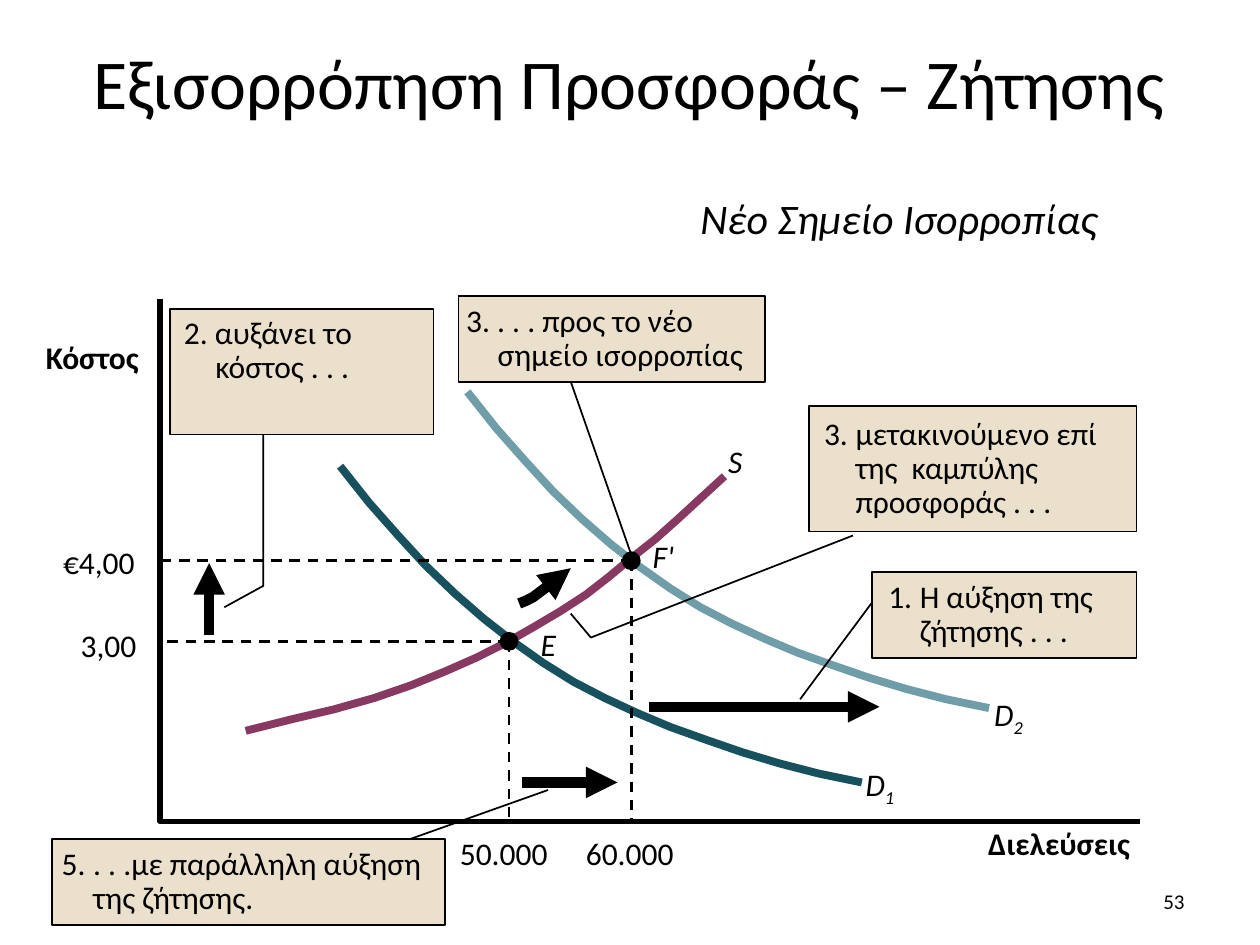
import pptx
import pptx.util
import pptx.dml.color
import pptx.enum.dml
import pptx.enum.shapes
import pptx.enum.text
import pptx.oxml
import pptx.oxml.ns

RGBColor = pptx.dml.color.RGBColor
ALIGN = pptx.enum.text.PP_ALIGN
ANCHOR = pptx.enum.text.MSO_ANCHOR
SHAPE = pptx.enum.shapes.MSO_SHAPE
Pt = pptx.util.Pt
qn = pptx.oxml.ns.qn

BLACK = RGBColor(0x00, 0x00, 0x00)
SAND = RGBColor(0xEB, 0xE0, 0xCC)
TEAL = RGBColor(0x17, 0x51, 0x5E)
LIGHT_TEAL = RGBColor(0x6F, 0x9D, 0xA8)
PLUM = RGBColor(0x87, 0x39, 0x62)

TITLE = "Εξισορρόπηση Προσφοράς – Ζήτησης"
ORIGIN = (1.27, 6.52)
AXES = [(1.27, 2.37), ORIGIN, (9.05, 6.52)]
EQUILIBRIA = [(4.04, 5.09), (5.01, 4.45)]
DOT = 0.15
DEMAND_SHIFT = (1.01, -0.59)
DEMAND = [
    (6.84, 6.21), (6.5, 6.14), (6.19, 6.06), (5.89, 5.97), (5.6, 5.87),
    (5.32, 5.77), (5.06, 5.66), (4.8, 5.54), (4.55, 5.41), (4.31, 5.26),
    (4.07, 5.09), (3.84, 4.91), (3.61, 4.71), (3.38, 4.49), (3.16, 4.25),
    (2.93, 3.99), (2.7, 3.7),
]
SUPPLY = [
    (1.95, 5.8), (2.31, 5.71), (2.65, 5.63), (2.97, 5.54), (3.26, 5.44),
    (3.53, 5.33), (3.78, 5.22), (4.02, 5.1), (4.23, 4.98), (4.45, 4.85),
    (4.65, 4.72), (4.83, 4.58), (5.01, 4.43), (5.2, 4.28), (5.38, 4.12),
    (5.75, 3.78),
]
ARROWS = [
    [(1.66, 5.04), (1.66, 4.47)],
    [(4.14, 6.21), (4.9, 6.21)],
    [(5.15, 5.61), (6.98, 5.61)],
    [(4.12, 4.79), (4.17, 4.77), (4.23, 4.74), (4.35, 4.65), (4.48, 4.57),
     (4.52, 4.54), (4.53, 4.51)],
]
LEADERS = [
    [(6.35, 5.55), (6.93, 4.77)],
    [(3.14, 6.7), (4.35, 6.27)],
    [(6.77, 4.25), (4.69, 5.06), (4.53, 4.87)],
    [(2.09, 3.15), (2.09, 4.65), (1.78, 4.82)],
    [(4.52, 3), (5.02, 4.43)],
]
CALLOUTS = [
    ("1.\tΗ αύξηση της ζήτησης . . .", (6.92, 4.54, 2.1, 0.68), 0.13, 0.07),
    ("3. . . . προς το νέο σημείο ισορροπίας", (3.64, 2.35, 2.43, 0.68), 0.06, 0.07),
    ("5.\t. . .με παράλληλη αύξηση της ζήτησης.", (0.41, 6.66, 3.12, 0.68), 0.08, 0.07),
    ("3.\tμετακινούμενο επί της  καμπύλης προσφοράς . . .", (6.42, 3.22, 2.6, 1), 0.12, 0.1),
    ("2. αυξάνει το κόστος . . .", (1.35, 2.45, 2.09, 1), 0.11, 0.07),
]
CURVE_LABELS = [
    ("E", "", (4.29, 4.96, 0.17, 0.3)),
    ("F'", "", (5.18, 4.26, 0.28, 0.3)),
    ("S", "", (5.78, 3.51, 0.17, 0.3)),
    ("D", "1", (6.87, 6.07, 0.27, 0.3)),
    ("D", "2", (7.89, 5.52, 0.27, 0.3)),
]
TICK_LABELS = [
    ("€4,00", (0.5, 4.31, 0.58, 0.3)),
    ("3,00", (0.64, 4.97, 0.45, 0.3)),
    ("50.000", (3.65, 6.62, 0.7, 0.3)),
    ("60.000", (4.65, 6.62, 0.7, 0.3)),
]
AXIS_TITLES = [
    ("Διελεύσεις", (6.06, 6.57, 2.91, 0.27), 0.9),
    ("Κόστος", (-0.05, 2.74, 1.15, 0.25), 0.8),
]


def cm(inches):
    return pptx.util.Cm(inches * 2.54)


def add_run(p, text, size=18, bold=False, italic=False):
    r = p.add_run()
    r.text = text
    r.font.name = "Calibri"
    r.font.size = Pt(size)
    r.font.bold = bold
    r.font.italic = italic
    r.font.color.rgb = BLACK
    return r


def set_margins(tf, x, y):
    tf.margin_left = tf.margin_right = cm(x)
    tf.margin_top = tf.margin_bottom = cm(y)


def add_text(s, box, text, wrap=False, margins=(0, 0), align=ALIGN.LEFT, **font):
    tf = s.shapes.add_textbox(*map(cm, box)).text_frame
    tf.word_wrap = wrap
    tf.auto_size = pptx.enum.text.MSO_AUTO_SIZE.SHAPE_TO_FIT_TEXT
    set_margins(tf, *margins)
    p = tf.paragraphs[0]
    p.alignment = align
    add_run(p, text, **font)
    return tf


def add_path(s, points, color, width, dashed=False, arrow=False):
    pts = [(cm(x), cm(y)) for x, y in points]
    if len(pts) == 2:
        sp = s.shapes.add_connector(
            pptx.enum.shapes.MSO_CONNECTOR.STRAIGHT, *pts[0], *pts[1])
    else:
        fb = s.shapes.build_freeform(*pts[0])
        fb.add_line_segments(pts[1:], close=False)
        sp = fb.convert_to_shape()
        sp.fill.background()
    sp.line.color.rgb = color
    sp.line.width = Pt(width)
    if dashed:
        sp.line.dash_style = pptx.enum.dml.MSO_LINE.DASH
    spPr = sp.element.spPr
    if arrow:
        tail = pptx.oxml.ns.qn("a:tailEnd")
        spPr.find(qn("a:ln")).append(
            spPr.makeelement(tail, {"type": "triangle"}))
    spPr.append(spPr.makeelement(qn("a:effectLst"), {}))


def add_filled(s, kind, box, fill):
    sp = s.shapes.add_shape(kind, *map(cm, box))
    sp.shadow.inherit = False
    sp.fill.solid()
    sp.fill.fore_color.rgb = fill
    sp.line.color.rgb = BLACK
    sp.line.width = Pt(1)
    return sp


def add_callout(s, text, box, mx, my):
    tf = add_filled(s, SHAPE.RECTANGLE, box, SAND).text_frame
    tf.word_wrap = True
    tf.vertical_anchor = ANCHOR.TOP
    set_margins(tf, mx, my)
    p = tf.paragraphs[0]
    p.alignment = ALIGN.LEFT
    p.line_spacing = 0.9
    pPr = p._p.get_or_add_pPr()
    pPr.set("marL", str(cm(0.25)))
    pPr.set("indent", str(-cm(0.25)))
    add_run(p, text)


def main():
    prs = pptx.Presentation()
    prs.slide_width, prs.slide_height = cm(10), cm(7.5)
    s = prs.slides.add_slide(prs.slide_layouts[5])

    title = s.shapes.title
    title.left, title.top, title.width, title.height = map(cm, (-0.02, 0.02, 10.02, 1.25))
    title.text_frame.vertical_anchor = ANCHOR.MIDDLE
    p = title.text_frame.paragraphs[0]
    p.alignment = ALIGN.CENTER
    add_run(p, TITLE, size=40)

    for points in ARROWS:
        add_path(s, points, BLACK, 6, arrow=True)
    dx, dy = DEMAND_SHIFT
    new_demand = [(x + dx, y + dy) for x, y in DEMAND]
    for points, color in ((DEMAND, TEAL), (new_demand, LIGHT_TEAL), (SUPPLY, PLUM)):
        add_path(s, points, color, 4.5)
    for points in LEADERS:
        add_path(s, points, BLACK, 1)
    add_path(s, AXES, BLACK, 3)

    for x, y in EQUILIBRIA:
        add_path(s, [(x, y), (x, ORIGIN[1])], BLACK, 1.5, dashed=True)
        add_path(s, [(x, y), (ORIGIN[0], y)], BLACK, 1.5, dashed=True)
        dot = add_filled(s, SHAPE.OVAL, (x - DOT / 2, y - DOT / 2, DOT, DOT), BLACK)
        dot.line.fill.background()

    for callout in CALLOUTS:
        add_callout(s, *callout)

    for text, index, box in CURVE_LABELS:
        tf = add_text(s, box, text, italic=True)
        if index:
            r = add_run(tf.paragraphs[0], index, italic=True)
            r.font._rPr.set("baseline", "-25000")
    for text, box in TICK_LABELS:
        add_text(s, box, text)
    for text, box, spacing in AXIS_TITLES:
        tf = add_text(s, box, text, wrap=True, align=ALIGN.RIGHT, bold=True)
        tf.paragraphs[0].line_spacing = spacing

    add_text(s, (5.46, 1.48, 3.51, 0.5), "Νέο Σημείο Ισορροπίας",
             wrap=True, margins=(0.1, 0.05), size=24, italic=True)
    number = add_text(s, (7.17, 6.95, 2.33, 0.4), "53", wrap=True,
                      margins=(0.1, 0.05), align=ALIGN.RIGHT, size=12)
    number.auto_size = pptx.enum.text.MSO_AUTO_SIZE.NONE
    number.vertical_anchor = ANCHOR.MIDDLE

    prs.save("out.pptx")


if __name__ == "__main__":
    main()
